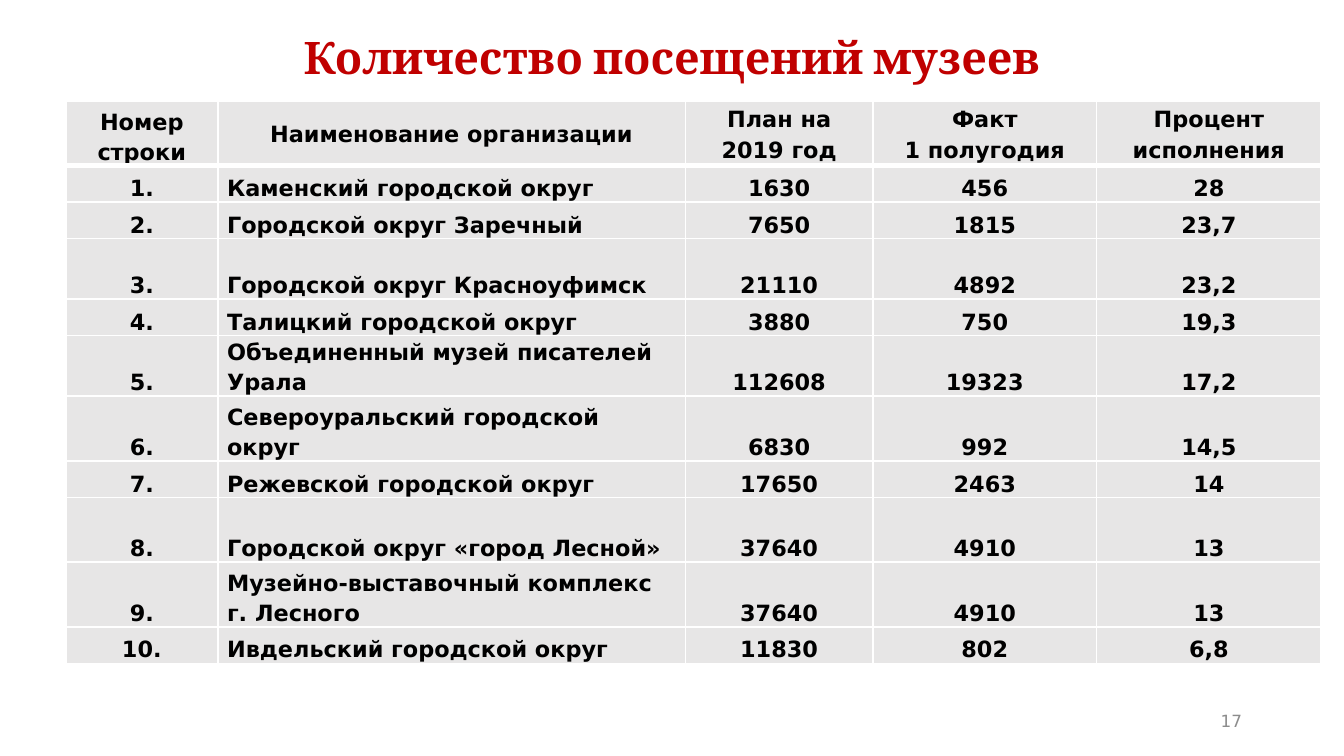
import pptx
import pptx.util
import pptx.dml.color
import pptx.enum.text
import pptx.oxml
import pptx.oxml.ns
from dataclasses import dataclass

Pt = pptx.util.Pt
RGB = pptx.dml.color.RGBColor.from_string
ALIGN = pptx.enum.text.PP_ALIGN
ANCHOR = pptx.enum.text.MSO_ANCHOR


@dataclass(frozen=True)
class Theme:
    heading_font: str = "Cambria"
    body_font: str = "DejaVu Sans"
    heading: str = "C00000"
    text: str = "000000"
    muted: str = "8C8C8C"
    cell: str = "E7E6E6"
    rule: str = "FFFFFF"
    heading_size: int = 24
    table_size: int = 12
    number_size: int = 9


theme = Theme()

prs = pptx.Presentation()
prs.slide_width = pptx.util.Inches(10)
prs.slide_height = prs.slide_width * 9 // 16


def share(x, y, w, h):
    W, H = prs.slide_width / 100, prs.slide_height / 100
    return [int(v) for v in (x * W, y * H, w * W, h * H)]


def style(tf, font, size, color, bold, align, spacing):
    for p in tf.paragraphs:
        p.alignment = align
        p.line_spacing = spacing
        for r in p.runs:
            r.font.name = font
            r.font.size = Pt(size)
            r.font.bold = bold
            r.font.color.rgb = RGB(color)


s = prs.slides.add_slide(prs.slide_layouts[5])

sp = s.shapes.title
sp.left, sp.top, sp.width, sp.height = share(6.9, 5.33, 86.2, 12.27)
tf = sp.text_frame
tf.text = "Количество посещений музеев"
tf.auto_size = pptx.enum.text.MSO_AUTO_SIZE.NONE
tf.vertical_anchor = ANCHOR.MIDDLE
tf.margin_top = Pt(3)
tf.margin_bottom = Pt(32)
style(tf, theme.heading_font, theme.heading_size, theme.heading, True, ALIGN.CENTER, 0.9)

header = ["Номер строки", "Наименование организации", "План на 2019 год",
          "Факт\n1 полугодия", "Процент исполнения"]
LOW, MID, TALL = 4.82, 8.03, 8.57
museums = [
    (LOW, "Каменский городской округ", "1630", "456", "28"),
    (LOW, "Городской округ Заречный", "7650", "1815", "23,7"),
    (MID, "Городской округ Красноуфимск", "21110", "4892", "23,2"),
    (LOW, "Талицкий городской округ", "3880", "750", "19,3"),
    (MID, "Объединенный музей писателей Урала", "112608", "19323", "17,2"),
    (TALL, "Североуральский городской округ", "6830", "992", "14,5"),
    (LOW, "Режевской городской округ", "17650", "2463", "14"),
    (TALL, "Городской округ «город Лесной»", "37640", "4910", "13"),
    (TALL, "Музейно-выставочный комплекс\vг. Лесного", "37640", "4910", "13"),
    (LOW, "Ивдельский городской округ", "11830", "802", "6,8"),
]
rows = [header] + [[f"{n}.", *m[1:]] for n, m in enumerate(museums, 1)]
heights = [TALL] + [m[0] for m in museums]
widths = [11.3, 34.8, 13.95, 16.65, 16.7]

table = s.shapes.add_table(len(rows), len(widths),
                           *share(4.9, 13.35, sum(widths), sum(heights))).table
table.horz_banding = False
for col, w in zip(table.columns, widths):
    col.width = int(prs.slide_width * w / 100)
for row, h in zip(table.rows, heights):
    row.height = int(prs.slide_height * h / 100)

for i, values in enumerate(rows):
    for j, value in enumerate(values):
        cell = table.cell(i, j)
        cell.fill.solid()
        cell.fill.fore_color.rgb = RGB(theme.cell)
        cell.margin_left = cell.margin_right = Pt(5)
        cell.margin_top = cell.margin_bottom = 0
        cell.vertical_anchor = ANCHOR.MIDDLE if i == 0 and j > 0 else ANCHOR.BOTTOM
        cell.text_frame.text = value
        align = ALIGN.LEFT if i > 0 and j == 1 else ALIGN.CENTER
        style(cell.text_frame, theme.body_font, theme.table_size, theme.text, True, align, 1.15)
        if i == 0:
            for n, (side, width) in enumerate(zip("LRTB", (1, 1, 1, 3))):
                line = pptx.oxml.parse_xml(
                    f'<a:ln{side} {pptx.oxml.ns.nsdecls("a")} w="{Pt(width)}"><a:solidFill>'
                    f'<a:srgbClr val="{theme.rule}"/></a:solidFill></a:ln{side}>')
                cell._tc.get_or_add_tcPr().insert(n, line)

sp = s.shapes.add_textbox(*share(70.6, 92.7, 22.5, 5.33))
tf = sp.text_frame
tf.word_wrap = True
tf.vertical_anchor = ANCHOR.MIDDLE
tf.margin_left = tf.margin_right = Pt(5)
tf.margin_top = tf.margin_bottom = Pt(3)
tf.text = "17"
style(tf, theme.body_font, theme.number_size, theme.muted, False, ALIGN.RIGHT, 1.0)

prs.save("out.pptx")
